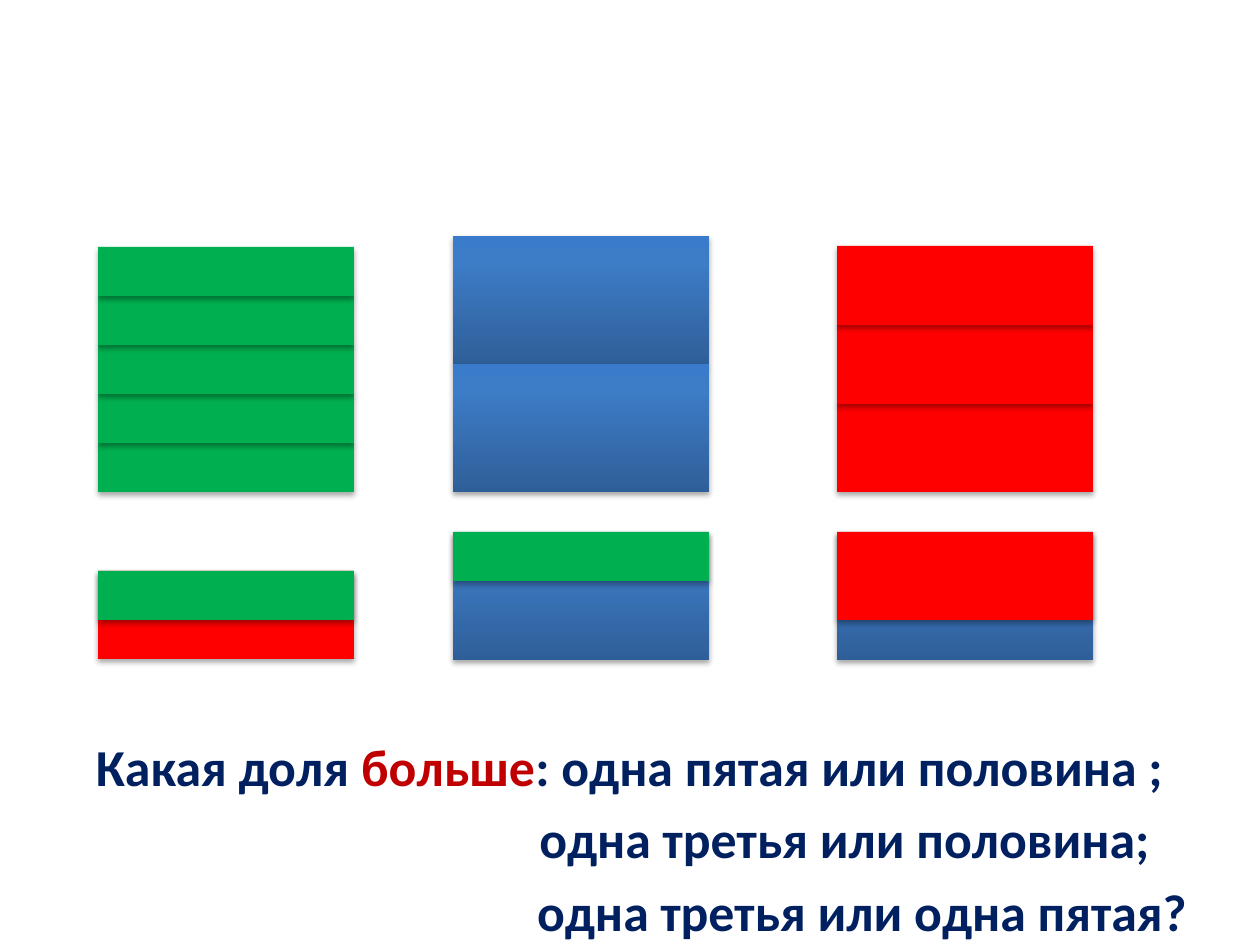
"""Build a slide that compares fifths, halves and thirds of a square."""
from dataclasses import dataclass

import pptx
import pptx.dml.color
import pptx.enum.shapes
import pptx.enum.text
import pptx.oxml
import pptx.oxml.ns
import pptx.util

PX = 914400 / 126
COLORS = {
    "fifth": "00B050",
    "third": "FF0000",
    "navy": "002060",
    "accent": "C00000",
    "shadow": "000000",
}
HALF_STOPS = {0: "2F5F99", 80: "3D7CC7", 100: "3A7CCB"}
HEIGHTS = {"fifth": 49, "half": 128, "third": 88}
BAR_WIDTH = 256
LEFT, MIDDLE, RIGHT = 98, 453, 837
NAMESPACE = pptx.oxml.ns.nsdecls("a")


@dataclass(frozen=True)
class Bar:
    left: int
    top: int
    height: int
    share: str


@dataclass(frozen=True)
class Comparison:
    left: int
    top: int
    larger: str
    smaller: str


@dataclass(frozen=True)
class Line:
    indent: int
    spans: tuple[tuple[str, str], ...]


WHOLES = (
    *(Bar(LEFT, 443 - 49 * step, 49, "fifth") for step in range(5)),
    *(Bar(MIDDLE, top, 128, "half") for top in (236, 364)),
    Bar(RIGHT, 404, 88, "third"),
    *(Bar(RIGHT, top, 79, "third") for top in (325, 246)),
)
COMPARISONS = (
    Comparison(MIDDLE, 532, "half", "fifth"),
    Comparison(RIGHT, 532, "half", "third"),
    Comparison(LEFT, 571, "third", "fifth"),
)
QUESTION = (
    Line(0, (("Какая доля", "navy"), (" больше", "accent"),
             (": одна пятая или половина ;", "navy"))),
    Line(430, (("одна третья или половина;", "navy"),)),
    Line(465, (("одна третья или одна пятая?", "navy"),)),
)


def px(length: int) -> pptx.util.Emu:
    """Turn pixels into EMU."""
    return pptx.util.Emu(round(length * PX))


def rgb(name: str) -> pptx.dml.color.RGBColor:
    """Look up a named colour."""
    return pptx.dml.color.RGBColor.from_string(COLORS[name])


def add_gradient(properties) -> None:
    """Fill a shape with the blue gradient, dark at the bottom."""
    stops = "".join(
        f'<a:gs pos="{position * 1000}"><a:srgbClr val="{color}"/></a:gs>'
        for position, color in HALF_STOPS.items()
    )
    gradient = pptx.oxml.parse_xml(
        f'<a:gradFill {NAMESPACE} rotWithShape="1"><a:gsLst>{stops}</a:gsLst>'
        '<a:lin ang="16200000" scaled="0"/></a:gradFill>'
    )
    properties.find(pptx.oxml.ns.qn("a:prstGeom")).addnext(gradient)


def add_shadow(properties) -> None:
    """Put a soft shadow below a shape."""
    shadow = pptx.oxml.parse_xml(
        f'<a:outerShdw {NAMESPACE} blurRad="40000" dist="23000" dir="5400000" '
        f'rotWithShape="0"><a:srgbClr val="{COLORS["shadow"]}">'
        '<a:alpha val="35000"/></a:srgbClr></a:outerShdw>'
    )
    properties.find(pptx.oxml.ns.qn("a:effectLst")).append(shadow)


def draw_bar(page, bar: Bar) -> None:
    """Draw one share as a rectangle."""
    shape = page.shapes.add_shape(
        pptx.enum.shapes.MSO_SHAPE.RECTANGLE,
        px(bar.left), px(bar.top), px(BAR_WIDTH), px(bar.height),
    )
    properties = shape.element.spPr
    if bar.share == "half":
        add_gradient(properties)
    else:
        shape.fill.solid()
        shape.fill.fore_color.rgb = rgb(bar.share)
    shape.line.fill.background()
    shape.shadow.inherit = False
    add_shadow(properties)


def draw_comparison(page, pair: Comparison) -> None:
    """Lay the smaller share over the larger one."""
    for share in (pair.larger, pair.smaller):
        draw_bar(page, Bar(pair.left, pair.top, HEIGHTS[share], share))


def draw_question(page, lines: tuple[Line, ...]) -> None:
    """Write the question below the shares."""
    box = page.shapes.add_textbox(0, px(728), px(1260), px(193))
    frame = box.text_frame
    frame.word_wrap = True
    for index, line in enumerate(lines):
        para = frame.add_paragraph() if index else frame.paragraphs[0]
        para.alignment = pptx.enum.text.PP_ALIGN.CENTER
        if index:
            para.space_before = pptx.util.Pt(6)
            para._p.get_or_add_pPr().set("marL", str(px(line.indent)))
        para.font.name = "Calibri"
        para.font.size = pptx.util.Pt(29.6)
        para.font.bold = True
        for text, color in line.spans:
            span = para.add_run()
            span.text = text
            span.font.color.rgb = rgb(color)


def main() -> None:
    """Build and save the deck."""
    deck = pptx.Presentation()
    deck.slide_width, deck.slide_height = px(1260), px(945)
    page = deck.slides.add_slide(deck.slide_layouts[6])
    draw_question(page, QUESTION)
    for bar in WHOLES:
        draw_bar(page, bar)
    for pair in COMPARISONS:
        draw_comparison(page, pair)
    deck.save("out.pptx")


if __name__ == "__main__":
    main()
